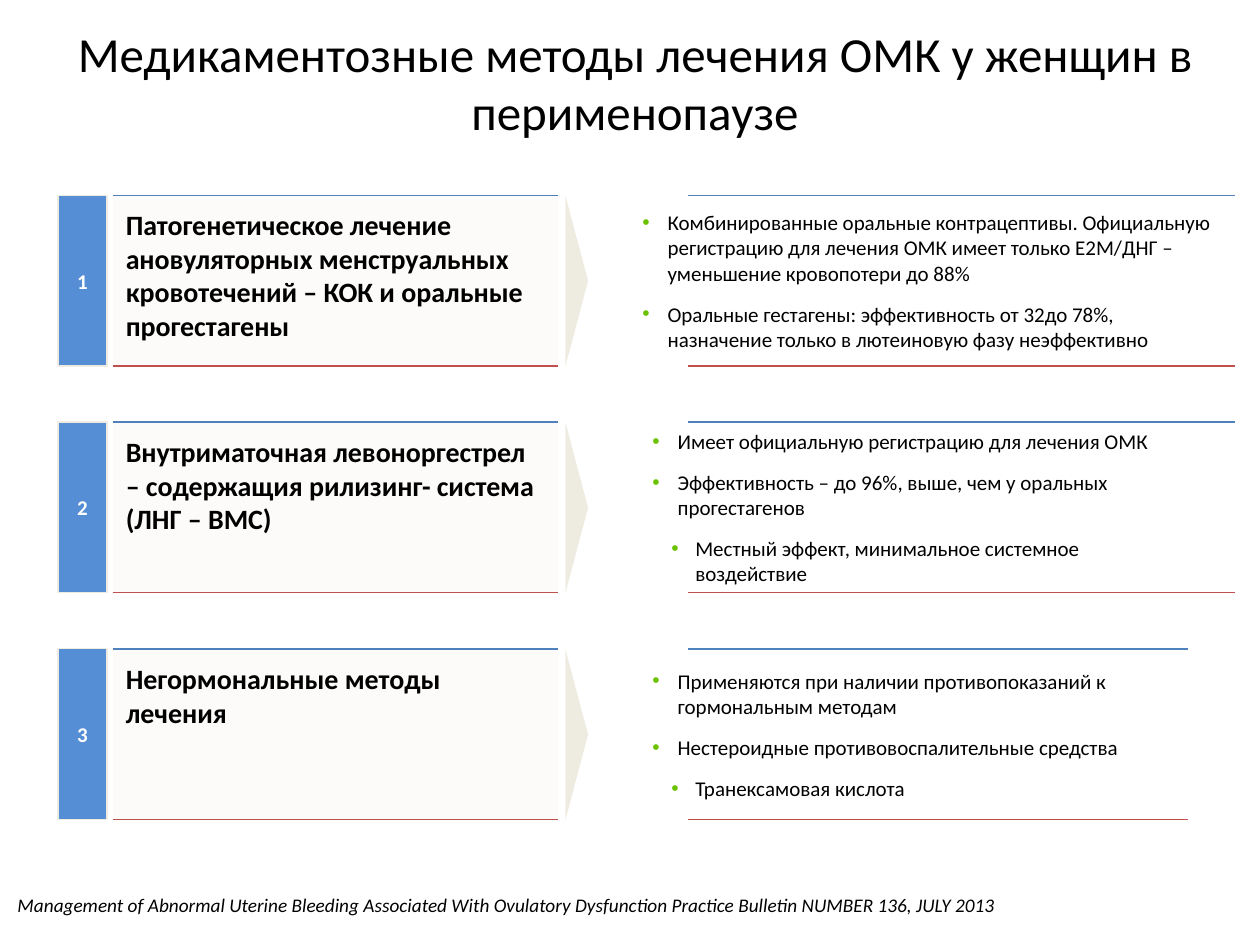
from lxml import etree
from pptx import Presentation
from pptx.dml.color import RGBColor
from pptx.enum.shapes import MSO_CONNECTOR, MSO_SHAPE
from pptx.enum.text import MSO_ANCHOR, MSO_AUTO_SIZE, PP_ALIGN
from pptx.oxml.ns import qn
from pptx.util import Inches, Pt

COLORS = {
    "text": "000000", "white": "FFFFFF", "number": "558ED5", "panel": "FCFBF9",
    "beige": "EEECE1", "top": "4F81BD", "bottom": "C0504D", "bullet": "6BC200",
}
ROW_TOP, ROW_STEP, ROW_H = 1.55, 1.8, 1.355
BULLET_INDENTS = {1: (0.2, -0.2), 2: (0.34, -0.19)}

# Each row: heading, left edge and width of the list, right end of its rules, (level, text)
ROWS = [
    ("Патогенетическое лечение ановуляторных менструальных кровотечений – КОК и оральные прогестагены",
     5, 5.51, 9.8, [
         (1, "Комбинированные оральные контрацептивы. Официальную регистрацию для лечения ОМК "
             "имеет только Е2М/ДНГ – уменьшение кровопотери до 88%"),
         (1, "Оральные гестагены: эффективность от 32до 78%, назначение только в лютеиновую "
             "фазу неэффективно")]),
    ("Внутриматочная левоноргестрел – содержащия рилизинг- система (ЛНГ – ВМС)",
     5.08, 4.92, 9.8, [
         (1, "Имеет официальную регистрацию для лечения ОМК"),
         (1, "Эффективность – до 96%, выше, чем у оральных прогестагенов"),
         (2, "Местный эффект, минимальное системное воздействие")]),
    ("Негормональные методы лечения",
     5.08, 4.92, 9.43, [
         (1, "Применяются при наличии противопоказаний к гормональным методам"),
         (1, "Нестероидные противовоспалительные средства"),
         (2, "Транексамовая кислота")]),
]


def add_block(kind, x, y, w, h, fill):
    sp = s.shapes.add_shape(kind, Inches(x), Inches(y), Inches(w), Inches(h))
    sp.shadow.inherit = False
    sp.fill.solid()
    sp.fill.fore_color.rgb = RGBColor.from_string(COLORS[fill])
    sp.line.fill.background()
    return sp


def style(p, size, color="text", bold=False, italic=False, spaced=True):
    p.font.name = "Calibri"
    p.font.size = Pt(size)
    p.font.bold = bold
    p.font.italic = italic
    p.font.color.rgb = RGBColor.from_string(COLORS[color])
    if spaced:
        p.space_before, p.space_after = Pt(3), Pt(6)


prs = Presentation()
prs.slide_width, prs.slide_height = Inches(10), Inches(7.5)
s = prs.slides.add_slide(prs.slide_layouts[5])

# Title
title = s.shapes.title
title.left, title.top, title.width, title.height = Inches(0.51), Inches(0.13), Inches(9.06), Inches(1.04)
tf = title.text_frame
tf.text = "Медикаментозные методы лечения ОМК у женщин в перименопаузе"
tf.vertical_anchor = MSO_ANCHOR.MIDDLE
tf.paragraphs[0].alignment = PP_ALIGN.CENTER
style(tf.paragraphs[0], 28, spaced=False)

for i, (heading, list_x, list_w, rule_end, items) in enumerate(ROWS):
    y = ROW_TOP + i * ROW_STEP

    # Heading panel
    panel = add_block(MSO_SHAPE.RECTANGLE, 0.9, y, 3.53, ROW_H, "panel")
    tf = panel.text_frame
    tf.word_wrap = True
    tf.vertical_anchor = MSO_ANCHOR.TOP
    tf.margin_left = tf.margin_right = tf.margin_top = tf.margin_bottom = Inches(0.1)
    p = tf.paragraphs[0]
    p.text = heading
    p.alignment = PP_ALIGN.LEFT
    style(p, 16, bold=True)

    # Bulleted list
    box = s.shapes.add_textbox(Inches(list_x), Inches(y), Inches(list_w), Inches(ROW_H))
    tf = box.text_frame
    tf.word_wrap = True
    tf.vertical_anchor = MSO_ANCHOR.MIDDLE
    tf.margin_left = tf.margin_top = tf.margin_bottom = Inches(0.1)
    tf.margin_right = Inches(0.84)
    for j, (level, text) in enumerate(items):
        p = tf.add_paragraph() if j else tf.paragraphs[0]
        p.text = text
        p.level = level
        style(p, 12)
        margin, indent = BULLET_INDENTS[level]
        pPr = p._p.get_or_add_pPr()
        pPr.set("marL", str(Inches(margin)))
        pPr.set("indent", str(Inches(indent)))
        bu_clr = etree.Element(qn("a:buClr"))
        etree.SubElement(bu_clr, qn("a:srgbClr"), val=COLORS["bullet"])
        bu_font = etree.Element(qn("a:buFont"), typeface="Arial")
        bu_char = etree.Element(qn("a:buChar"), char="•")
        at = list(pPr).index(pPr.find(qn("a:defRPr")))
        pPr[at:at] = [bu_clr, bu_font, bu_char]

    # Rules above and below the panel and the list
    for x1, x2 in ((0.9, 4.43), (5.46, rule_end)):
        for rule_y, color in ((y, "top"), (y + ROW_H, "bottom")):
            rule = s.shapes.add_connector(MSO_CONNECTOR.STRAIGHT, Inches(x1), Inches(rule_y),
                                          Inches(x2), Inches(rule_y))
            rule.line.color.rgb = RGBColor.from_string(COLORS[color])
            rule.line.width = Pt(0.75)
            etree.SubElement(rule._element.spPr, qn("a:effectLst"))

    # Row number
    number = add_block(MSO_SHAPE.RECTANGLE, 0.46, y, 0.39, ROW_H, "number")
    number.line.color.rgb = RGBColor.from_string(COLORS["beige"])
    number.line.width = Pt(0.75)
    tf = number.text_frame
    tf.vertical_anchor = MSO_ANCHOR.MIDDLE
    p = tf.paragraphs[0]
    p.text = str(i + 1)
    p.alignment = PP_ALIGN.CENTER
    style(p, 12, "white", bold=True)

    # Arrow towards the list
    arrow = add_block(MSO_SHAPE.ISOSCELES_TRIANGLE, 3.9, y + 0.59, ROW_H, 0.18, "beige")
    arrow.rotation = 90

# Source
box = s.shapes.add_textbox(Inches(0.04), Inches(7.04), Inches(8.08), Inches(0.47))
tf = box.text_frame
tf.word_wrap = False
tf.auto_size = MSO_AUTO_SIZE.SHAPE_TO_FIT_TEXT
p = tf.paragraphs[0]
p.text = ("Management of Abnormal Uterine Bleeding Associated With Ovulatory Dysfunction "
          "Practice Bulletin NUMBER 136, JULY 2013")
style(p, 11, italic=True, spaced=False)

prs.save("out.pptx")
